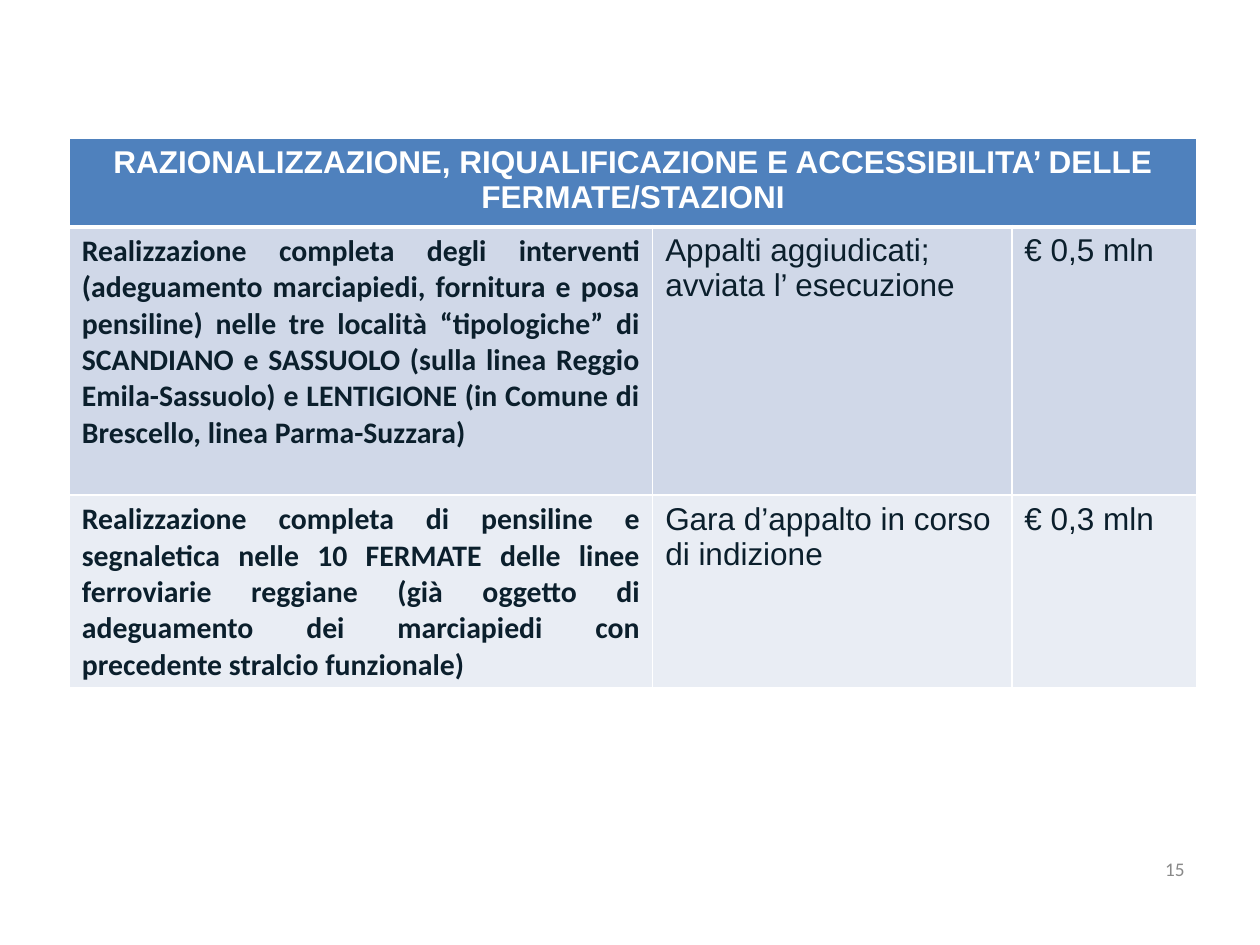
from lxml import etree
from pptx import Presentation
from pptx.dml.color import RGBColor
from pptx.enum.text import MSO_ANCHOR, PP_ALIGN
from pptx.oxml.ns import qn
from pptx.util import Inches, Pt

LEFT, CENTER, RIGHT, JUSTIFY = PP_ALIGN.LEFT, PP_ALIGN.CENTER, PP_ALIGN.RIGHT, PP_ALIGN.JUSTIFY
MIDDLE = MSO_ANCHOR.MIDDLE
BLANK_LAYOUT = 6

COLORS = {
    "header": "4F81BD",
    "odd_row": "D0D8E8",
    "even_row": "E9EDF4",
    "border": "FFFFFF",
    "header_text": "FFFFFF",
    "body_text": "0B1F2C",
    "page_number": "898989",
}

COLUMN_WIDTHS = [4.63, 2.85, 1.47]
ROW_HEIGHTS = [0.65, 2.13, 1.53]

HEADING = "RAZIONALIZZAZIONE, RIQUALIFICAZIONE E ACCESSIBILITA’ DELLE FERMATE/STAZIONI"
PROJECTS = [
    (
        "Realizzazione completa degli interventi (adeguamento marciapiedi, fornitura e posa "
        "pensiline) nelle tre località “tipologiche” di SCANDIANO e SASSUOLO (sulla linea Reggio "
        "Emila-Sassuolo) e LENTIGIONE (in Comune di Brescello, linea Parma-Suzzara)",
        "Appalti aggiudicati; avviata l’ esecuzione",
        "€ 0,5 mln",
    ),
    (
        "Realizzazione completa di pensiline e segnaletica nelle 10 FERMATE delle linee "
        "ferroviarie reggiane (già oggetto di adeguamento dei marciapiedi con precedente "
        "stralcio funzionale)",
        "Gara d’appalto in corso di indizione",
        "€ 0,3 mln",
    ),
]


def write_text(text_frame, text, font_name, size, color, alignment=LEFT, bold=False):
    paragraph = text_frame.paragraphs[0]
    paragraph.text = text
    paragraph.alignment = alignment
    font = paragraph.font
    font.name, font.size, font.bold = font_name, Pt(size), bold
    font.color.rgb = RGBColor.from_string(COLORS[color])


def set_borders(cell, bottom_width):
    """Draw the four sides; they must come before the fill in the cell properties."""
    properties = cell._tc.get_or_add_tcPr()
    widths = {"a:lnL": 1, "a:lnR": 1, "a:lnT": 1, "a:lnB": bottom_width}
    for position, (tag, width) in enumerate(widths.items()):
        line = etree.Element(qn(tag), w=str(Pt(width)))
        fill = etree.SubElement(line, qn("a:solidFill"))
        etree.SubElement(fill, qn("a:srgbClr"), val=COLORS["border"])
        properties.insert(position, line)


def style_cell(cell, fill, bottom_width=1):
    cell.fill.solid()
    cell.fill.fore_color.rgb = RGBColor.from_string(COLORS[fill])
    set_borders(cell, bottom_width)


def add_project_table(slide):
    shape = slide.shapes.add_table(
        len(ROW_HEIGHTS), len(COLUMN_WIDTHS), Inches(0.55), Inches(1.1),
        Inches(sum(COLUMN_WIDTHS)), Inches(sum(ROW_HEIGHTS)),
    )
    table = shape.table
    for column, width in zip(table.columns, COLUMN_WIDTHS):
        column.width = Inches(width)
    for row, height in zip(table.rows, ROW_HEIGHTS):
        row.height = Inches(height)

    # Heading across all columns
    heading = table.cell(0, 0)
    heading.merge(table.cell(0, len(COLUMN_WIDTHS) - 1))
    for cell in table.rows[0].cells:
        style_cell(cell, "header", bottom_width=3)
    write_text(heading.text_frame, HEADING, "Arial", 18, "header_text", CENTER, True)

    # One row per project: work, status, cost
    for row_index, project in enumerate(PROJECTS, start=1):
        fill = "odd_row" if row_index % 2 else "even_row"
        for column_index, text in enumerate(project):
            cell = table.cell(row_index, column_index)
            style_cell(cell, fill)
            if column_index == 0:
                write_text(cell.text_frame, text, "Calibri", 17, "body_text", JUSTIFY, True)
            else:
                write_text(cell.text_frame, text, "Arial", 18, "body_text")


def add_page_number(slide, number):
    box = slide.shapes.add_textbox(Inches(7.17), Inches(6.65), Inches(2.33), Inches(0.49))
    text_frame = box.text_frame
    text_frame.word_wrap = True
    text_frame.vertical_anchor = MIDDLE
    write_text(text_frame, str(number), "Calibri", 11, "page_number", RIGHT)


def main():
    presentation = Presentation()
    presentation.slide_width, presentation.slide_height = Inches(10), Inches(7.5)
    slide = presentation.slides.add_slide(presentation.slide_layouts[BLANK_LAYOUT])
    add_page_number(slide, 15)
    add_project_table(slide)
    presentation.save("out.pptx")


if __name__ == "__main__":
    main()
